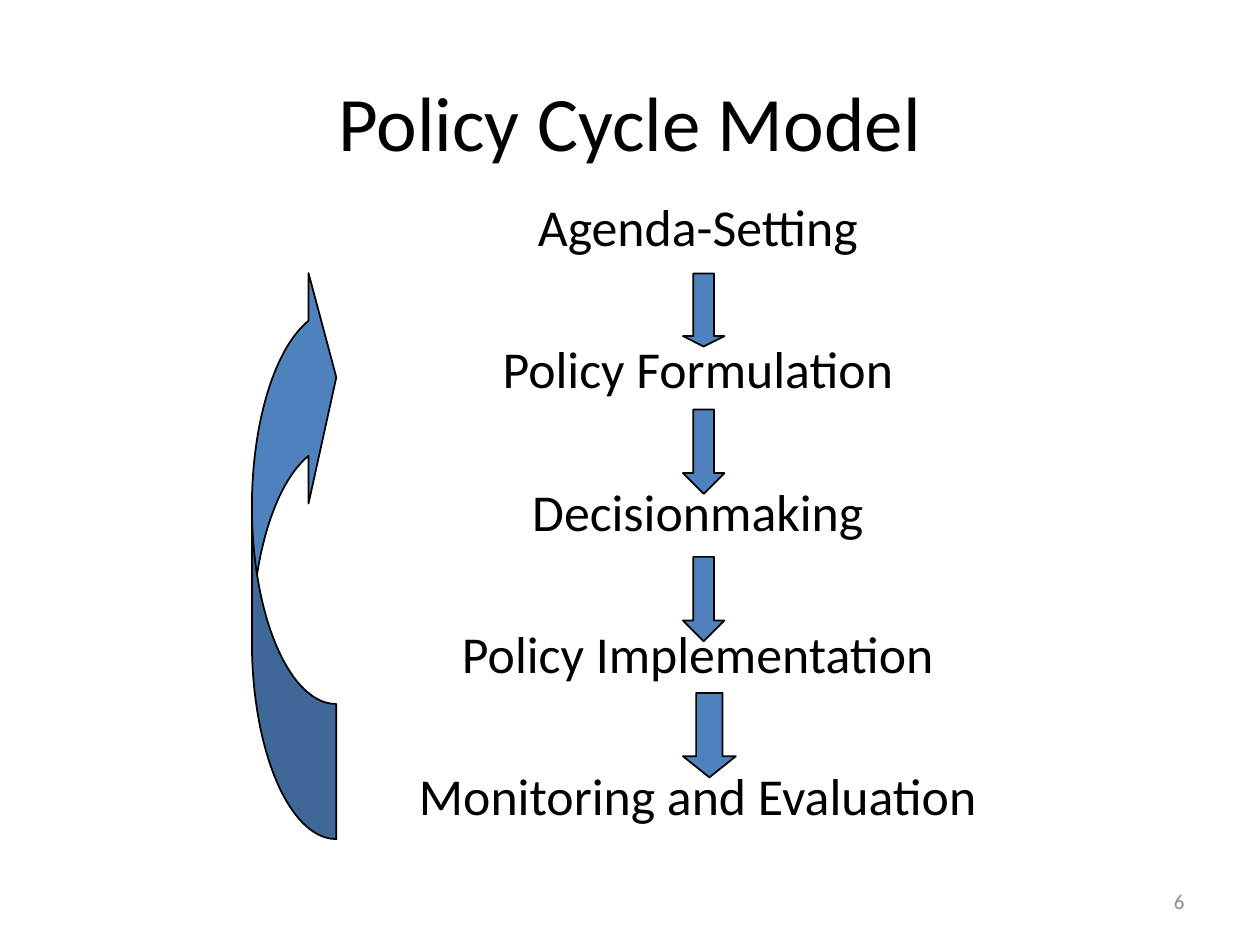
from pptx import Presentation
from pptx.dml.color import RGBColor
from pptx.enum.shapes import MSO_SHAPE as Shape
from pptx.enum.text import MSO_ANCHOR as Anchor, PP_ALIGN as Align
from pptx.util import Inches, Pt

COLORS = {"text": "000000", "number": "8C8C8C", "arrow": "4F81BD", "outline": "000000"}


def write_text(shape, lines, size, color="text", align=Align.CENTER,
               anchor=Anchor.MIDDLE, line_spacing=None, gap=0, first_gap=0):
    frame = shape.text_frame
    frame.word_wrap = True
    frame.vertical_anchor = anchor
    for index, line in enumerate(lines):
        paragraph = frame.add_paragraph() if index else frame.paragraphs[0]
        paragraph.alignment = align
        paragraph.space_before = Pt(gap if index else first_gap)
        if line_spacing:
            paragraph.line_spacing = line_spacing
        run = paragraph.add_run()
        run.text = line
        run.font.name = "Calibri"
        run.font.size = Pt(size)
        run.font.color.rgb = RGBColor.from_string(COLORS[color])


def add_arrow(kind, left, top, width, height, adjustments):
    arrow = slide.shapes.add_shape(
        kind, Inches(left), Inches(top), Inches(width), Inches(height))
    arrow.shadow.inherit = False
    arrow.fill.solid()
    arrow.fill.fore_color.rgb = RGBColor.from_string(COLORS["arrow"])
    arrow.line.color.rgb = RGBColor.from_string(COLORS["outline"])
    arrow.line.width = Pt(1)
    for index, value in enumerate(adjustments):
        arrow.adjustments[index] = value
    return arrow


presentation = Presentation()
presentation.slide_width = Inches(10)
presentation.slide_height = Inches(7.5)
slide = presentation.slides.add_slide(presentation.slide_layouts[5])

# Title
title = slide.shapes.title
title.left, title.top = Inches(0.75), Inches(0.33)
title.width, title.height = Inches(8.5), Inches(1.25)
write_text(title, ["Policy Cycle Model"], size=44)

# Slide number
number = slide.shapes.add_textbox(Inches(7.17), Inches(6.95), Inches(2.33), Inches(0.4))
write_text(number, ["6"], size=12, color="number", align=Align.RIGHT)

# Stages of the cycle
stages = slide.shapes.add_textbox(Inches(1.08), Inches(1.67), Inches(8.92), Inches(5.42))
write_text(
    stages,
    ["Agenda-Setting", "Policy Formulation", "Decisionmaking",
     "Policy Implementation", "Monitoring and Evaluation"],
    size=29.6, anchor=Anchor.TOP, line_spacing=0.6, gap=60, first_gap=3)

# Arrows from each stage to the next: top, width, height, head length
for top, width, height, head in [
    (2.17, 0.33, 0.58, 0.25),
    (3.25, 0.33, 0.67, 0.5),
    (4.42, 0.33, 0.67, 0.5),
    (5.5, 0.42, 0.67, 0.4),
]:
    add_arrow(Shape.DOWN_ARROW, 5.42, top, width, height, [0.5, head])

# Feedback arrow from the last stage back to the first
feedback = add_arrow(Shape.CURVED_LEFT_ARROW, 2, 2.08, 0.67, 4.58, [1.6, 2.73, 0.33])
transform = feedback.element.spPr.xfrm
transform.set("flipH", "1")
transform.set("flipV", "1")

presentation.save("out.pptx")
